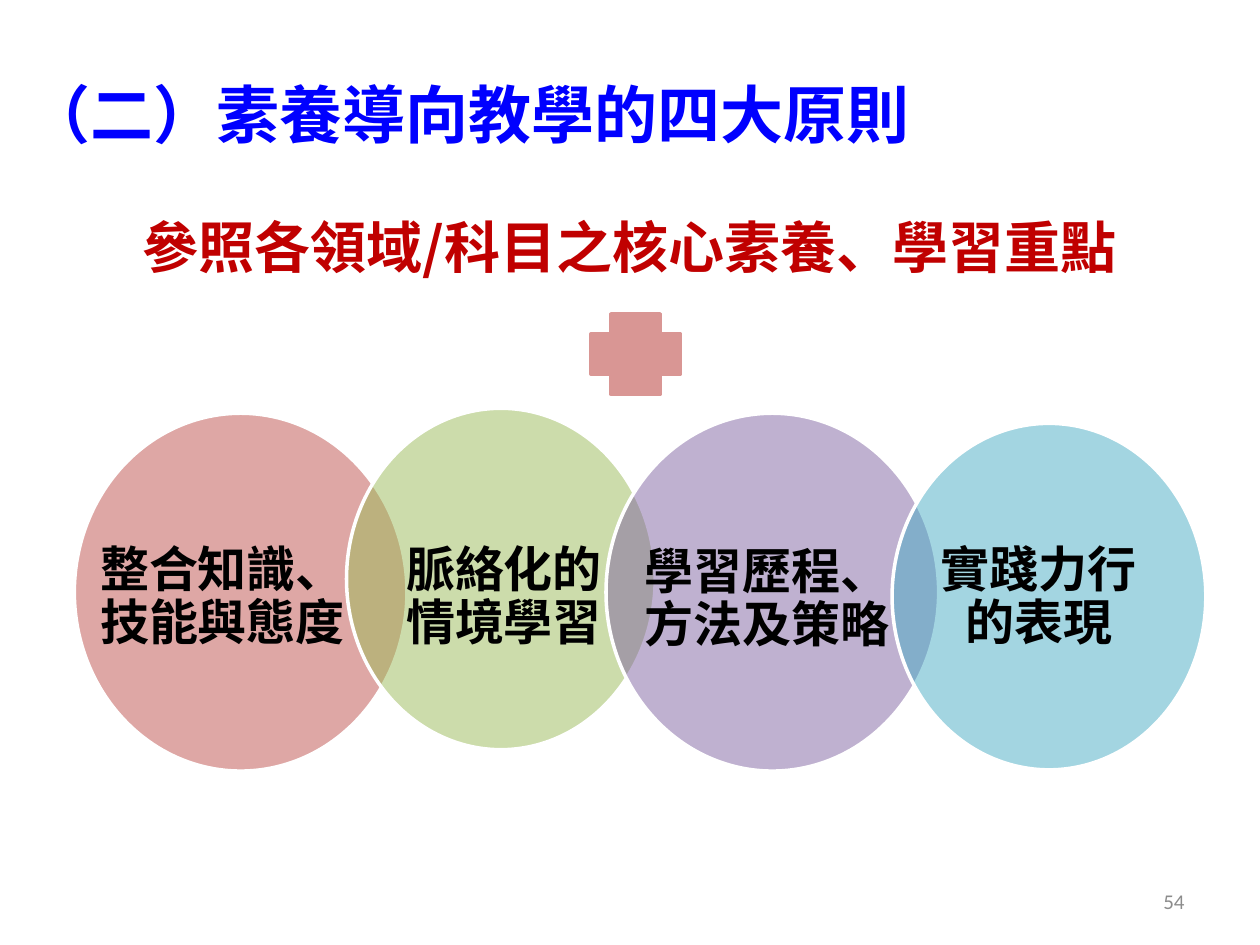
from dataclasses import dataclass

from lxml import etree
from pptx import Presentation
from pptx.dml.color import RGBColor
from pptx.enum.shapes import MSO_SHAPE
from pptx.enum.text import MSO_ANCHOR, MSO_AUTO_SIZE, PP_ALIGN
from pptx.oxml.ns import qn
from pptx.util import Inches, Pt

LEFT, CENTER, RIGHT = PP_ALIGN.LEFT, PP_ALIGN.CENTER, PP_ALIGN.RIGHT
TOP, MIDDLE = MSO_ANCHOR.TOP, MSO_ANCHOR.MIDDLE
NO_FIT = MSO_AUTO_SIZE.NONE
ELLIPSE, PLUS = MSO_SHAPE.OVAL, MSO_SHAPE.CROSS
TITLE_ONLY = 5


@dataclass(frozen=True)
class Theme:
    cjk: str = "Noto Sans CJK SC"
    latin: str = "Calibri"
    blue: str = "0000FF"
    red: str = "C00000"
    pink: str = "D99694"
    white: str = "FFFFFF"
    black: str = "000000"
    gray: str = "8C8C8C"
    title_size: int = 36
    lead_size: int = 32
    label_size: int = 28
    number_size: int = 12
    outline: int = 2


# Label lines, circle colour, circle box, label box
PRINCIPLES = [
    (["整合知識、", "技能與態度"], "BF504D",
     (0.59, 3.28, 2.64, 2.84), (0.64, 3.71, 2.25, 2.08)),
    (["脈絡化的", "情境學習"], "9BBB59",
     (2.75, 3.24, 2.45, 2.71), (3, 3.71, 2, 2.08)),
    (["學習歷程、", "方法及策略"], "8064A2",
     (4.81, 3.28, 2.64, 2.84), (4.96, 3.72, 2.25, 2.08)),
    (["實踐力行的表現"], "49ACC5",
     (7.08, 3.36, 2.49, 2.75), (7.31, 3.71, 1.87, 2.08)),
]


class SlideBuilder:
    def __init__(self, prs, theme):
        self.theme = theme
        self.slide = prs.slides.add_slide(prs.slide_layouts[TITLE_ONLY])

    def fill_text(self, s, lines, size, color, font=None, bold=True, align=CENTER,
                  anchor=TOP, inset=(0.1, 0.05), spacing=None):
        font = font or self.theme.cjk
        tf = s.text_frame
        side, edge = map(Inches, inset)
        frame = {"word_wrap": True, "auto_size": NO_FIT, "vertical_anchor": anchor,
                 "margin_left": side, "margin_right": side,
                 "margin_top": edge, "margin_bottom": edge}
        for name, value in frame.items():
            setattr(tf, name, value)
        for i, line in enumerate(lines):
            p = tf.paragraphs[0] if i == 0 else tf.add_paragraph()
            p.alignment, p.line_spacing = align, spacing
            p.space_before = Pt(0)
            r = p.add_run()
            r.text = line
            for name, value in {"name": font, "size": Pt(size), "bold": bold}.items():
                setattr(r.font, name, value)
            r.font.color.rgb = RGBColor.from_string(color)
            ea = etree.SubElement(r.font._element, qn("a:ea"))
            ea.set("typeface", font)

    def title(self, text, box):
        s = self.slide.shapes.title
        s.left, s.top, s.width, s.height = map(Inches, box)
        self.fill_text(s, [text], self.theme.title_size, self.theme.blue, align=LEFT,
                       inset=(0.1, 0.05))

    def text(self, lines, box, size, color, **style):
        s = self.slide.shapes.add_textbox(*map(Inches, box))
        self.fill_text(s, lines, size, color, **style)

    def shape(self, kind, box, fill, line, alpha=None):
        """Add a preset shape; alpha is its fill opacity in percent."""
        s = self.slide.shapes.add_shape(kind, *map(Inches, box))
        s.shadow.inherit = False
        s.fill.solid()
        s.fill.fore_color.rgb = RGBColor.from_string(fill)
        s.line.color.rgb = RGBColor.from_string(line)
        s.line.width = Pt(self.theme.outline)
        if alpha is not None:
            color = s._element.spPr.find(qn("a:solidFill"))[0]
            etree.SubElement(color, qn("a:alpha")).set("val", str(alpha * 1000))


def main():
    prs = Presentation()
    prs.slide_width, prs.slide_height = Inches(10), Inches(7.5)
    theme = Theme()
    page = SlideBuilder(prs, theme)

    page.title("（二）素養導向教學的四大原則", (0.12, 0.55, 8.67, 0.84))
    page.text(["54"], (7.17, 6.95, 2.33, 0.4), theme.number_size, theme.gray,
              font=theme.latin, bold=False, align=RIGHT, anchor=MIDDLE)
    page.text(["參照各領域/科目之核心素養、學習重點"], (0.75, 1.64, 8.5, 0.64),
              theme.lead_size, theme.red)
    page.shape(PLUS, (4.69, 2.49, 0.71, 0.64), theme.pink, theme.pink)

    for lines, color, circle, label in PRINCIPLES:
        page.shape(ELLIPSE, circle, color, theme.white, alpha=50)
        page.text(lines, label, theme.label_size, theme.black, anchor=MIDDLE,
                  inset=(0.15, 0.04), spacing=0.9)

    prs.save("out.pptx")


if __name__ == "__main__":
    main()
